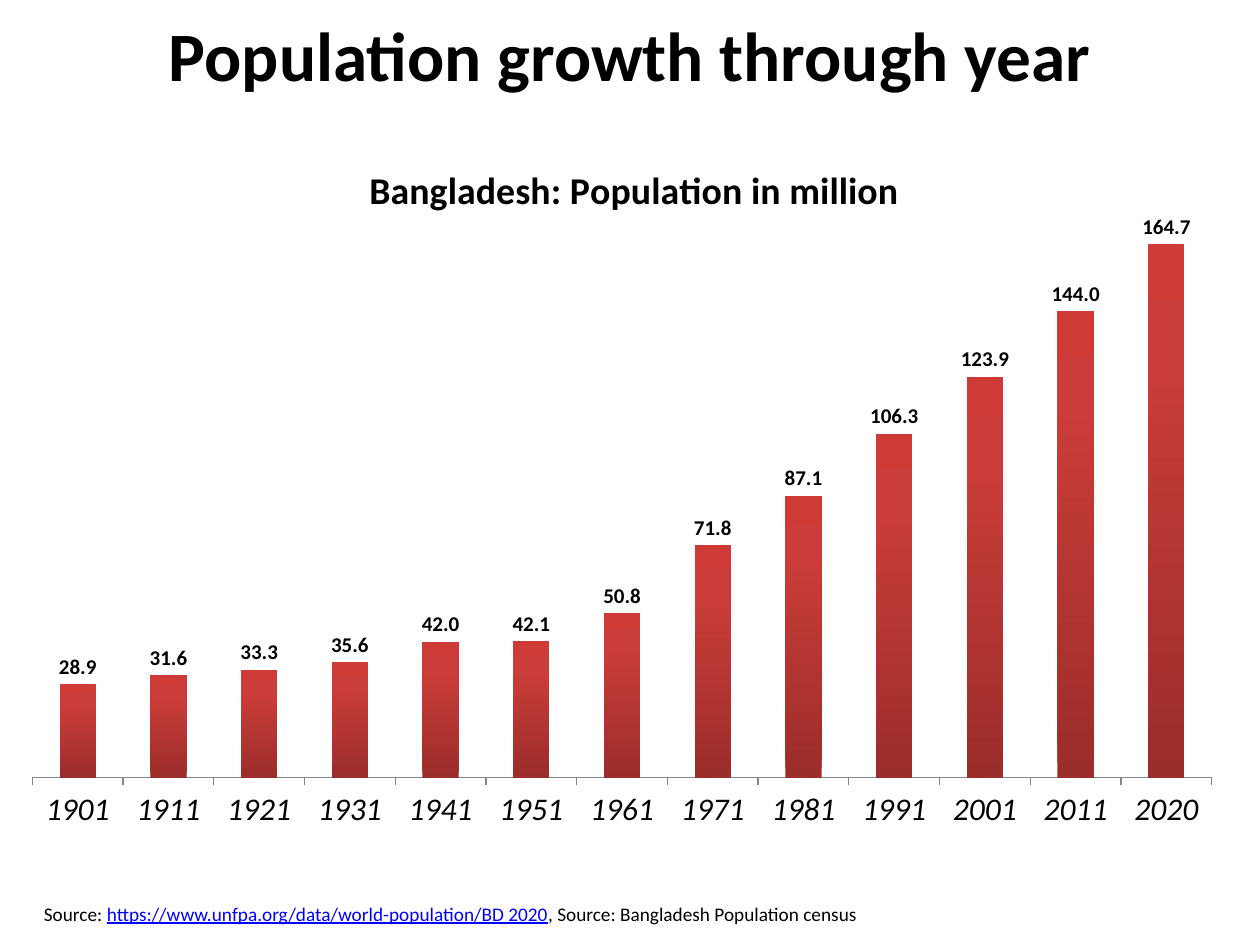
from copy import deepcopy
from dataclasses import dataclass

from lxml.etree import SubElement
from pptx import Presentation
from pptx.chart.data import CategoryChartData
from pptx.dml.color import RGBColor as Rgb
from pptx.enum.chart import XL_CHART_TYPE as ChartType
from pptx.enum.chart import XL_LABEL_POSITION as LabelPosition
from pptx.enum.chart import XL_TICK_MARK as TickMark
from pptx.enum.text import MSO_ANCHOR as Anchor
from pptx.enum.text import PP_ALIGN as Align
from pptx.oxml.ns import qn
from pptx.util import Inches, Pt


@dataclass(frozen=True)
class Theme:
    font: str = "Calibri"
    ink: str = "000000"
    link: str = "0000FF"
    axis: str = "868686"
    bar_stops: tuple = ((0, "9B2D2A"), (0.8, "CB3D3A"), (1, "CE3B37"))
    title: float = 39.6
    chart_title: float = 21.6
    years: float = 18
    values: float = 12
    source: float = 11


theme = Theme()


def add_text(para, text, size, color=theme.ink, bold=False, underline=False):
    span = para.add_run()
    span.text = text
    span.font.name, span.font.size = theme.font, Pt(size)
    span.font.bold, span.font.underline = bold, underline
    span.font.color.rgb = Rgb.from_string(color)


def place_chart_part(part, index, **settings):
    """Give a chart title or plot area a manual layout, as shares of the chart."""
    for old in part.findall(qn("c:layout")):
        part.remove(old)
    layout = SubElement(part, qn("c:layout"))
    manual = SubElement(layout, qn("c:manualLayout"))
    for name, value in settings.items():
        SubElement(manual, qn(f"c:{name}")).set("val", str(value))
    part.insert(index, layout)


deck = Presentation()
deck.slide_width, deck.slide_height = Inches(10), Inches(7.5)
page = deck.slides.add_slide(deck.slide_layouts[5])

# Title
title = page.shapes.title
title.left, title.top = Inches(0.5), Inches(0.16)
title.width, title.height = Inches(9), Inches(0.53)
title.text_frame.vertical_anchor = Anchor.MIDDLE
title.text_frame.paragraphs[0].alignment = Align.CENTER
add_text(title.text_frame.paragraphs[0], "Population growth through year", theme.title, bold=True)

# Population by census year
data = CategoryChartData(number_format="0.0")
data.categories = [str(year) for year in range(1901, 2012, 10)] + ["2020"]
data.add_series("Series 1", (28.9, 31.6, 33.3, 35.6, 42, 42.1, 50.8,
                             71.8, 87.1, 106.3, 123.9, 144, 164.7))
chart = page.shapes.add_chart(ChartType.COLUMN_CLUSTERED, Inches(0.17), Inches(1),
                              Inches(9.67), Inches(6.08), data).chart
chart.has_legend = False
chart.font.name, chart.font.size = theme.font, Pt(theme.years)
chart.font.color.rgb = Rgb.from_string(theme.ink)

chart.has_title = True
heading = chart.chart_title.text_frame.paragraphs[0]
add_text(heading, "Bangladesh: Population in million", theme.chart_title, bold=True)
place_chart_part(chart.chart_title._element, 1, xMode="edge", yMode="edge", x=0.28, y=0.04)
plot_area = chart._chartSpace.find(f".//{qn('c:plotArea')}")
place_chart_part(plot_area, 0, layoutTarget="inner", xMode="edge", yMode="edge",
                 x=0.009, y=0.09, w=0.968, h=0.761)

years = chart.category_axis
years.major_tick_mark = TickMark.OUTSIDE
years.format.line.color.rgb = Rgb.from_string(theme.axis)
years.tick_labels.font.size = Pt(theme.years)
years.tick_labels.font.italic = True
millions = chart.value_axis
millions.minimum_scale, millions.maximum_scale = 0, 180
millions.has_major_gridlines = False
millions.tick_labels.number_format = "0.0"
millions.tick_labels.number_format_is_linked = False
millions.visible = False

plot = chart.plots[0]
plot.gap_width = 150
plot.vary_by_categories = False
population = plot.series[0]
bar_fill = population.format.fill
bar_fill.gradient()
bar_fill.gradient_angle = 90
stop_list = population._element.find(f".//{qn('a:gsLst')}")
stop_list.append(deepcopy(stop_list[-1]))
for stop, (position, color) in zip(bar_fill.gradient_stops, theme.bar_stops):
    stop.position = position
    stop.color.rgb = Rgb.from_string(color)

labels = population.data_labels
labels.show_value = True
labels.position = LabelPosition.OUTSIDE_END
labels.number_format, labels.number_format_is_linked = "0.0", False
labels.font.name, labels.font.size, labels.font.bold = theme.font, Pt(theme.values), True
labels.font.color.rgb = Rgb.from_string(theme.ink)

# Source line
source = page.shapes.add_textbox(Inches(0.25), Inches(7.11), Inches(9.17), Inches(0.29))
source.text_frame.word_wrap = True
credit = source.text_frame.paragraphs[0]
add_text(credit, "Source: ", theme.source)
add_text(credit, "https://www.unfpa.org/data/world-population/BD 2020", theme.source,
         color=theme.link, underline=True)
add_text(credit, ", Source: Bangladesh Population census", theme.source)

deck.save("out.pptx")
